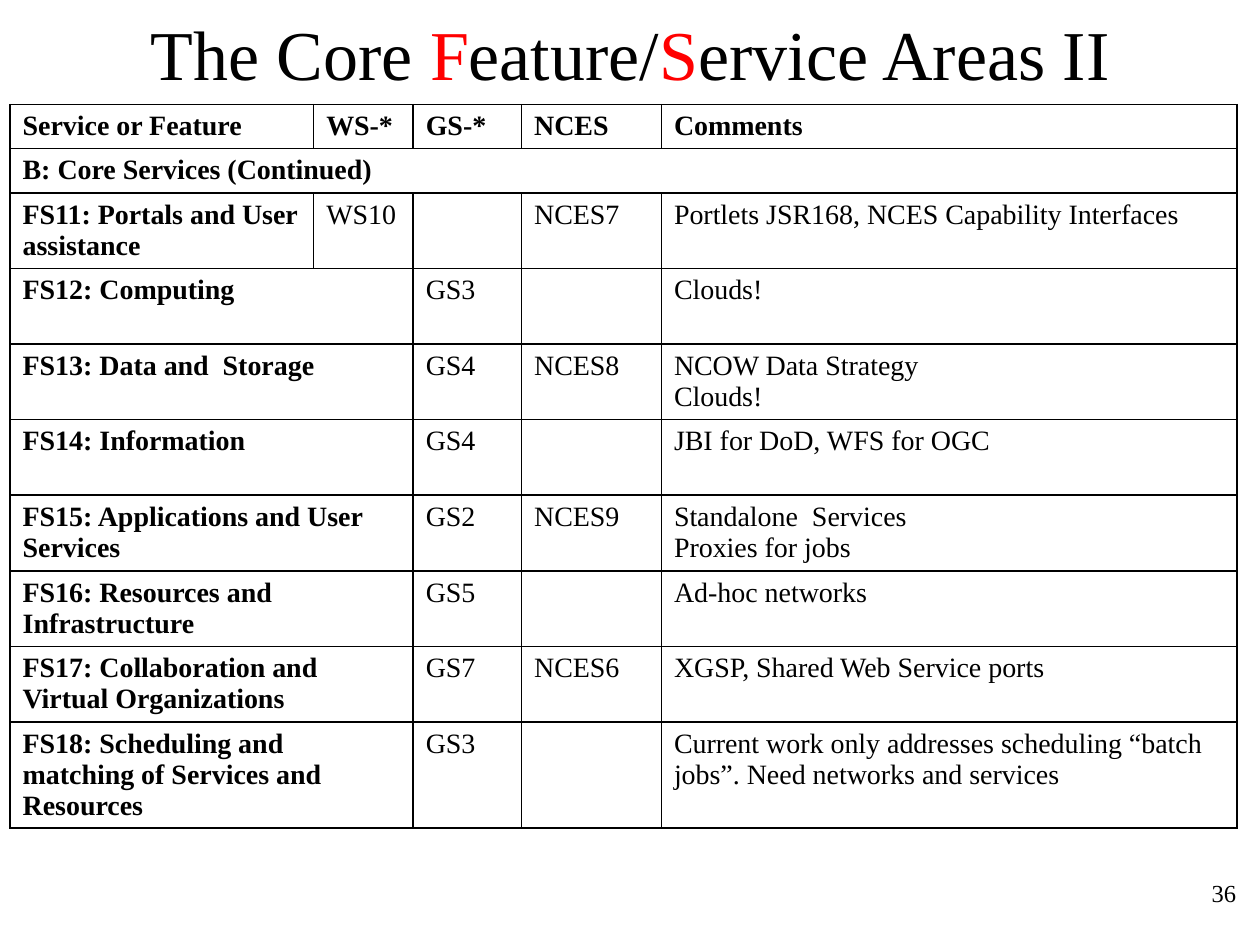
import pptx
import pptx.util
import pptx.dml.color
import pptx.enum.text
import pptx.oxml
import pptx.oxml.ns
from pptx.util import Inches

FONT = "Times New Roman"
ALIGN = pptx.enum.text.PP_ALIGN
ANCHOR = pptx.enum.text.MSO_ANCHOR


def style(r, size, color="000000", bold=False):
    r.font.name = FONT
    r.font.size = pptx.util.Pt(size)
    r.font.bold = bold
    r.font.color.rgb = pptx.dml.color.RGBColor.from_string(color)


def add_borders(cell):
    tcPr = cell._tc.get_or_add_tcPr()
    for side in "LRTB":
        tcPr.append(pptx.oxml.parse_xml(
            f'<a:ln{side} {pptx.oxml.ns.nsdecls("a")} w="12700"><a:solidFill>'
            f'<a:srgbClr val="000000"/></a:solidFill></a:ln{side}>'))


prs = pptx.Presentation()
prs.slide_width, prs.slide_height = Inches(10), Inches(7.5)
s = prs.slides.add_slide(prs.slide_layouts[5])

title = s.shapes.title
title.left, title.top = Inches(0.75), Inches(0)
title.width, title.height = Inches(8.5), Inches(0.83)
tf = title.text_frame
tf.vertical_anchor = ANCHOR.MIDDLE
p = tf.paragraphs[0]
p.alignment = ALIGN.CENTER
for text, color in [("The Core ", "000000"), ("F", "FF0000"), ("eature/", "000000"),
                    ("S", "FF0000"), ("ervice Areas II", "000000")]:
    r = p.add_run()
    r.text = text
    style(r, 40, color)

rows = [
    ("Service or Feature", "WS-*", "GS-*", "NCES", "Comments"),
    ("B: Core Services (Continued)", "", "", "", ""),
    ("FS11: Portals and User assistance", "WS10", "", "NCES7",
     "Portlets JSR168, NCES Capability Interfaces"),
    ("FS12: Computing", "", "GS3", "", "Clouds!"),
    ("FS13: Data and  Storage", "", "GS4", "NCES8", "NCOW Data Strategy\nClouds!"),
    ("FS14: Information", "", "GS4", "", "JBI for DoD, WFS for OGC"),
    ("FS15: Applications and User Services", "", "GS2", "NCES9",
     "Standalone  Services\nProxies for jobs"),
    ("FS16: Resources and Infrastructure", "", "GS5", "", "Ad-hoc networks"),
    ("FS17: Collaboration and \vVirtual Organizations", "", "GS7", "NCES6",
     "XGSP, Shared Web Service ports"),
    ("FS18: Scheduling and matching of Services and Resources", "", "GS3", "",
     "Current work only addresses scheduling “batch jobs”. Need networks and services"),
]
widths = [2.41, 0.79, 0.86, 1.11, 4.57]
heights = [0.35] * 2 + [0.6] * 7 + [0.84]

tbl = s.shapes.add_table(len(rows), len(widths), Inches(0.08), Inches(0.83),
                         Inches(sum(widths)), Inches(sum(heights))).table
tbl.first_row = tbl.horz_banding = False
for col, width in zip(tbl.columns, widths):
    col.width = Inches(width)
for i, (row, height) in enumerate(zip(rows, heights)):
    tbl.rows[i].height = Inches(height)
    for j, text in enumerate(row):
        cell = tbl.cell(i, j)
        add_borders(cell)
        cell.fill.background()
        if text:
            cell.text_frame.text = text
        for p in cell.text_frame.paragraphs:
            for r in p.runs:
                style(r, 16, bold=i == 0 or j == 0)

tbl.cell(1, 0).merge(tbl.cell(1, 4))
for i in range(3, len(rows)):
    tbl.cell(i, 0).merge(tbl.cell(i, 1))

number = s.shapes.add_textbox(Inches(7.83), Inches(6.92), Inches(2.08), Inches(0.5))
tf = number.text_frame
tf.word_wrap = True
tf.text = "36"
p = tf.paragraphs[0]
p.alignment = ALIGN.RIGHT
style(p.runs[0], 14)

prs.save("out.pptx")
